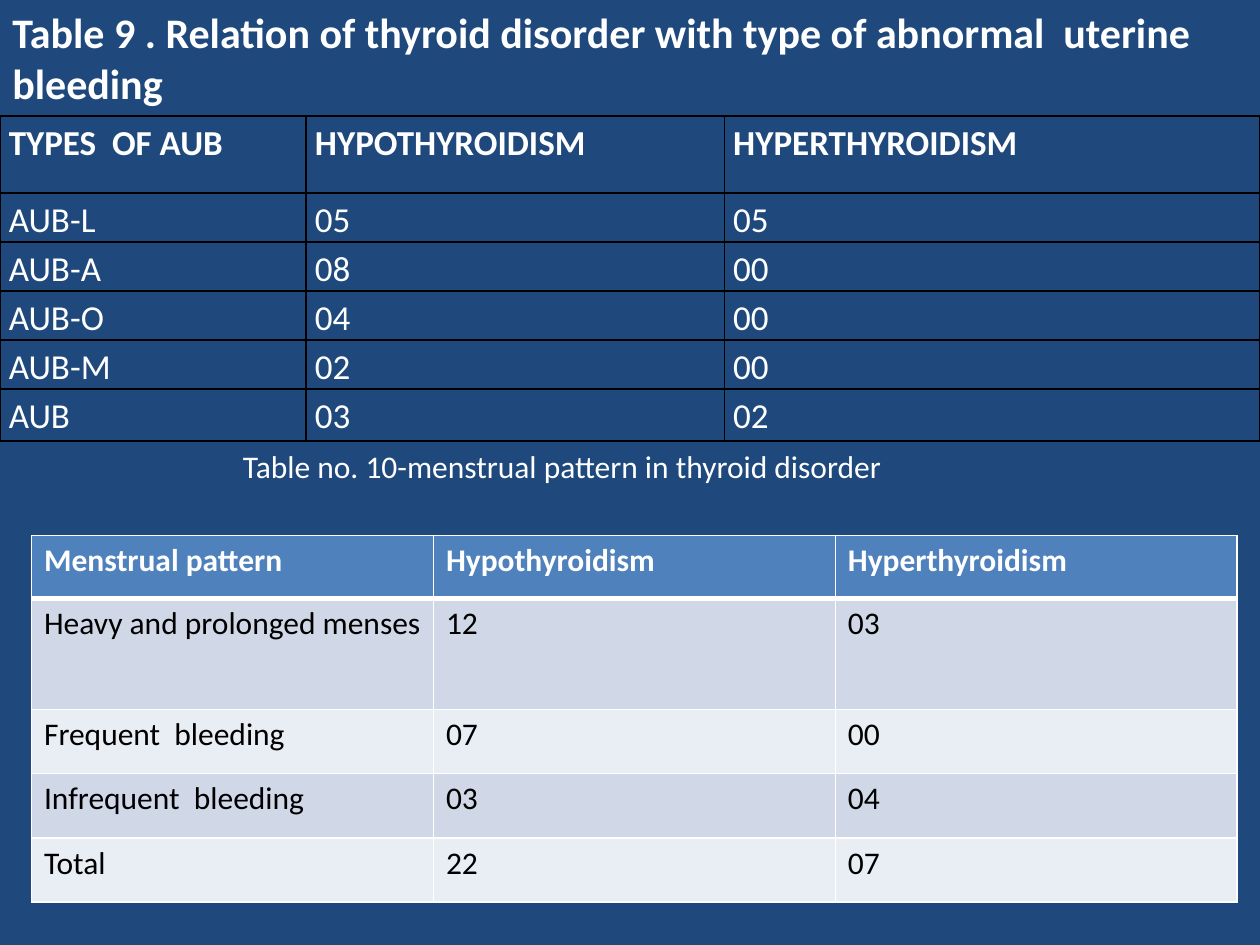
import lxml.etree
import pptx
import pptx.dml.color
import pptx.enum.text
import pptx.oxml.ns
import pptx.util

Inches = pptx.util.Inches
Pt = pptx.util.Pt
qn = pptx.oxml.ns.qn

AUB_ROWS = [
    ("TYPES  OF AUB", "HYPOTHYROIDISM", "HYPERTHYROIDISM"),
    ("AUB-L", "05", "05"),
    ("AUB-A", "08", "00"),
    ("AUB-O", "04", "00"),
    ("AUB-M", "02", "00"),
    ("AUB", "03", "02"),
]
MENSES_ROWS = [
    ("Menstrual pattern", "Hypothyroidism", "Hyperthyroidism"),
    ("Heavy and prolonged menses", "12", "03"),
    ("Frequent  bleeding", "07", "00"),
    ("Infrequent  bleeding", "03", "04"),
    ("Total", "22", "07"),
]


def rgb(value):
    return pptx.dml.color.RGBColor.from_string(value)


class SlideBuilder:
    """Hold the style and the current slide, and add its elements."""

    font = "Calibri"
    white = "FFFFFF"
    black = "000000"
    navy = "1F497D"
    blue = "4F81BD"
    bands = ("D0D8E8", "E9EDF4")

    def __init__(self, prs):
        self.slide = prs.slides.add_slide(prs.slide_layouts[6])
        fill = self.slide.background.fill
        fill.solid()
        fill.fore_color.rgb = rgb(self.navy)

    def format(self, tf, size, color, bold=False, spacing=None):
        for p in tf.paragraphs:
            if spacing:
                p.line_spacing = spacing
            for r in p.runs:
                r.font.name = self.font
                r.font.size = Pt(size)
                r.font.bold = bold
                r.font.color.rgb = rgb(color)

    def text(self, text, left, top, width, height, size, bold=False,
             anchor=pptx.enum.text.MSO_ANCHOR.TOP):
        sp = self.slide.shapes.add_textbox(
            Inches(left), Inches(top), Inches(width), Inches(height))
        tf = sp.text_frame
        tf.word_wrap = True
        tf.auto_size = pptx.enum.text.MSO_AUTO_SIZE.SHAPE_TO_FIT_TEXT
        tf.vertical_anchor = anchor
        tf.text = text
        self.format(tf, size, self.white, bold)

    def border(self, cell, color, top=1, bottom=1):
        tc_pr = cell._tc.get_or_add_tcPr()
        widths = {"a:lnL": 1, "a:lnR": 1, "a:lnT": top, "a:lnB": bottom}
        for i, (tag, width) in enumerate(widths.items()):
            ln = lxml.etree.Element(qn(tag), w=str(Pt(width)))
            solid = lxml.etree.SubElement(ln, qn("a:solidFill"))
            lxml.etree.SubElement(solid, qn("a:srgbClr"), val=color)
            tc_pr.insert(i, ln)

    def table(self, rows, left, top, widths, heights, size, line,
              banded=False, rule=1, margin=None, spacing=None):
        table = self.slide.shapes.add_table(
            len(rows), len(widths), Inches(left), Inches(top),
            Inches(sum(widths)), Inches(sum(heights))).table
        for column, width in zip(table.columns, widths):
            column.width = Inches(width)
        for i, (row, height) in enumerate(zip(rows, heights)):
            table.rows[i].height = Inches(height)
            color = self.black if banded and i else self.white
            for j, text in enumerate(row):
                cell = table.cell(i, j)
                if margin is not None:
                    cell.margin_left = cell.margin_right = Inches(margin)
                    cell.margin_top = cell.margin_bottom = 0
                cell.text_frame.text = text
                self.format(cell.text_frame, size, color, i == 0, spacing)
                if banded:
                    cell.fill.solid()
                    cell.fill.fore_color.rgb = rgb(
                        self.bands[(i - 1) % 2] if i else self.blue)
                else:
                    cell.fill.background()
                self.border(cell, line, top=rule if i == 1 else 1,
                            bottom=rule if i == 0 else 1)


def main():
    prs = pptx.Presentation()
    prs.slide_width = Inches(10)
    prs.slide_height = Inches(7.5)
    s = SlideBuilder(prs)
    s.text("Table 9 . Relation of thyroid disorder with type of abnormal  uterine bleeding",
           0, 0, 10, 0.91, 24, True, pptx.enum.text.MSO_ANCHOR.MIDDLE)
    s.table(AUB_ROWS, 0, 0.92, [2.43, 3.32, 4.25], [0.61] + [0.39] * 4 + [0.41],
            20, s.black, margin=0.07, spacing=1.15)
    s.text("Table no. 10-menstrual pattern in thyroid disorder",
           1.83, 3.5, 7.33, 0.4, 18)
    s.table(MENSES_ROWS, 0.25, 4.25, [3.19] * 3, [0.5, 0.88] + [0.51] * 3,
            18, s.white, banded=True, rule=3)
    prs.save("out.pptx")


if __name__ == "__main__":
    main()
